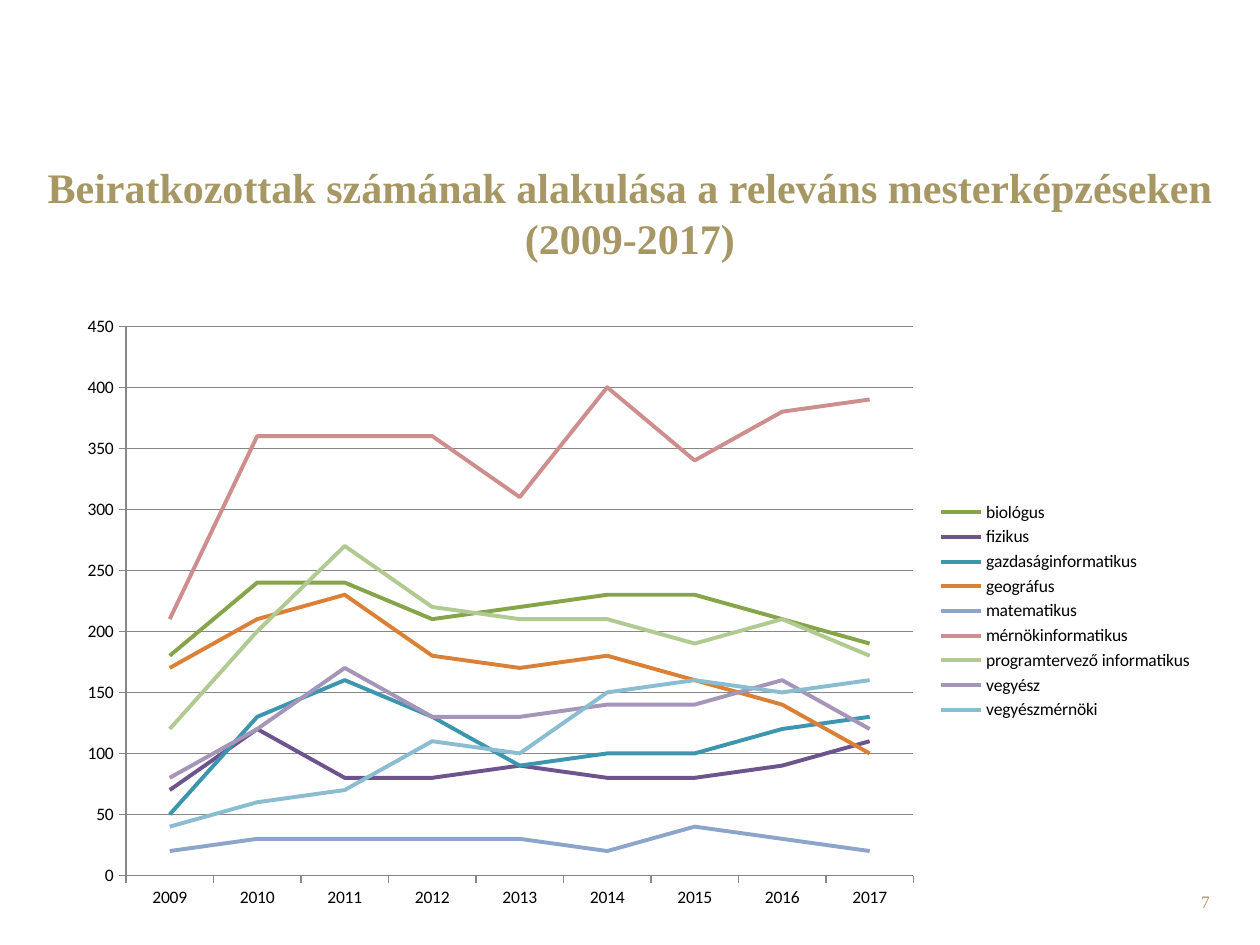
import pptx
import pptx.util
import pptx.chart.data
import pptx.dml.color
import pptx.enum.chart
import pptx.enum.text
import pptx.oxml
import pptx.oxml.ns

Inches = pptx.util.Inches
Pt = pptx.util.Pt
colors = {"gold": "A69765", "text": "000000", "grid": "868686"}


def rgb(code):
    return pptx.dml.color.RGBColor.from_string(code)


def add_text(slide, box, text, size, align, anchor, bold=False):
    shape = slide.shapes.add_textbox(*[Inches(n) for n in box])
    frame = shape.text_frame
    frame.word_wrap = True
    frame.vertical_anchor = anchor
    para = frame.paragraphs[0]
    para.alignment = align
    run = para.add_run()
    run.text = text
    run.font.name = "Times New Roman"
    run.font.size = Pt(size)
    run.font.bold = bold
    run.font.color.rgb = rgb(colors["gold"])


deck = pptx.Presentation()
deck.slide_width = Inches(10)
deck.slide_height = Inches(7.5)
slide = deck.slides.add_slide(deck.slide_layouts[6])

# Title and page number
align = pptx.enum.text.PP_ALIGN
anchor = pptx.enum.text.MSO_ANCHOR
add_text(slide, (7.37, 7.02, 2.33, 0.4), "7", 10, align.RIGHT, anchor.TOP)
add_text(slide, (0, 1.23, 10, 0.91),
         "Beiratkozottak számának alakulása a releváns mesterképzéseken (2009-2017)",
         24, align.CENTER, anchor.MIDDLE, True)

# Enrolment per programme: name, line colour, yearly values
rows = [
    ("biológus", "86A44A", (180, 240, 240, 210, 220, 230, 230, 210, 190)),
    ("fizikus", "6E548D", (70, 120, 80, 80, 90, 80, 80, 90, 110)),
    ("gazdaságinformatikus", "3D96AE", (50, 130, 160, 130, 90, 100, 100, 120, 130)),
    ("geográfus", "DA8137", (170, 210, 230, 180, 170, 180, 160, 140, 100)),
    ("matematikus", "8EA5CB", (20, 30, 30, 30, 30, 20, 40, 30, 20)),
    ("mérnökinformatikus", "CE8E8D", (210, 360, 360, 360, 310, 400, 340, 380, 390)),
    ("programtervező informatikus", "B1CA92",
     (120, 200, 270, 220, 210, 210, 190, 210, 180)),
    ("vegyész", "A595B9", (80, 120, 170, 130, 130, 140, 140, 160, 120)),
    ("vegyészmérnöki", "8BBDD2", (40, 60, 70, 110, 100, 150, 160, 150, 160)),
]
data = pptx.chart.data.CategoryChartData()
data.categories = [str(year) for year in range(2009, 2018)]
for name, color, vals in rows:
    data.add_series(name, vals)

# Line chart
kinds = pptx.enum.chart
wide, high = 9.06, 4.88
frame = slide.shapes.add_chart(kinds.XL_CHART_TYPE.LINE, Inches(0.51), Inches(2.41),
                               Inches(wide), Inches(high), data)
chart = frame.chart
chart.has_title = False
chart.font.name = "Calibri"
chart.font.size = Pt(10)
chart.font.color.rgb = rgb(colors["text"])
chart.has_legend = True
chart.legend.position = kinds.XL_LEGEND_POSITION.RIGHT
chart.legend.include_in_layout = False

plot = chart.plots[0]
plot.vary_by_categories = False
for line, (name, color, vals) in zip(plot.series, rows):
    line.smooth = False
    line.marker.style = kinds.XL_MARKER_STYLE.NONE
    line.format.line.width = Pt(2.25)
    line.format.line.color.rgb = rgb(color)

# Axes and grid
years, counts = chart.category_axis, chart.value_axis
counts.minimum_scale = 0
counts.maximum_scale = 450
counts.major_unit = 50
counts.has_major_gridlines = True
years.has_major_gridlines = False
for axis in (years, counts):
    axis.major_tick_mark = kinds.XL_TICK_MARK.OUTSIDE
    axis.minor_tick_mark = kinds.XL_TICK_MARK.NONE
for part in (years, counts, counts.major_gridlines):
    part.format.line.width = Pt(0.75)
    part.format.line.color.rgb = rgb(colors["grid"])

# Fixed inner plot area, as shares of the chart size
qn = pptx.oxml.ns.qn
area = chart._chartSpace.find(".//" + qn("c:plotArea"))
old = area.find(qn("c:layout"))
if old is not None:
    area.remove(old)
place = (("layoutTarget", "inner"), ("xMode", "edge"), ("yMode", "edge"),
         ("x", 0.49 / wide), ("y", 0.18 / high), ("w", 6.25 / wide), ("h", 4.36 / high))
tags = "".join(f'<c:{tag} val="{val}"/>' for tag, val in place)
area.insert(0, pptx.oxml.parse_xml(
    f'<c:layout {pptx.oxml.ns.nsdecls("c")}><c:manualLayout>{tags}</c:manualLayout></c:layout>'))

deck.save("out.pptx")
